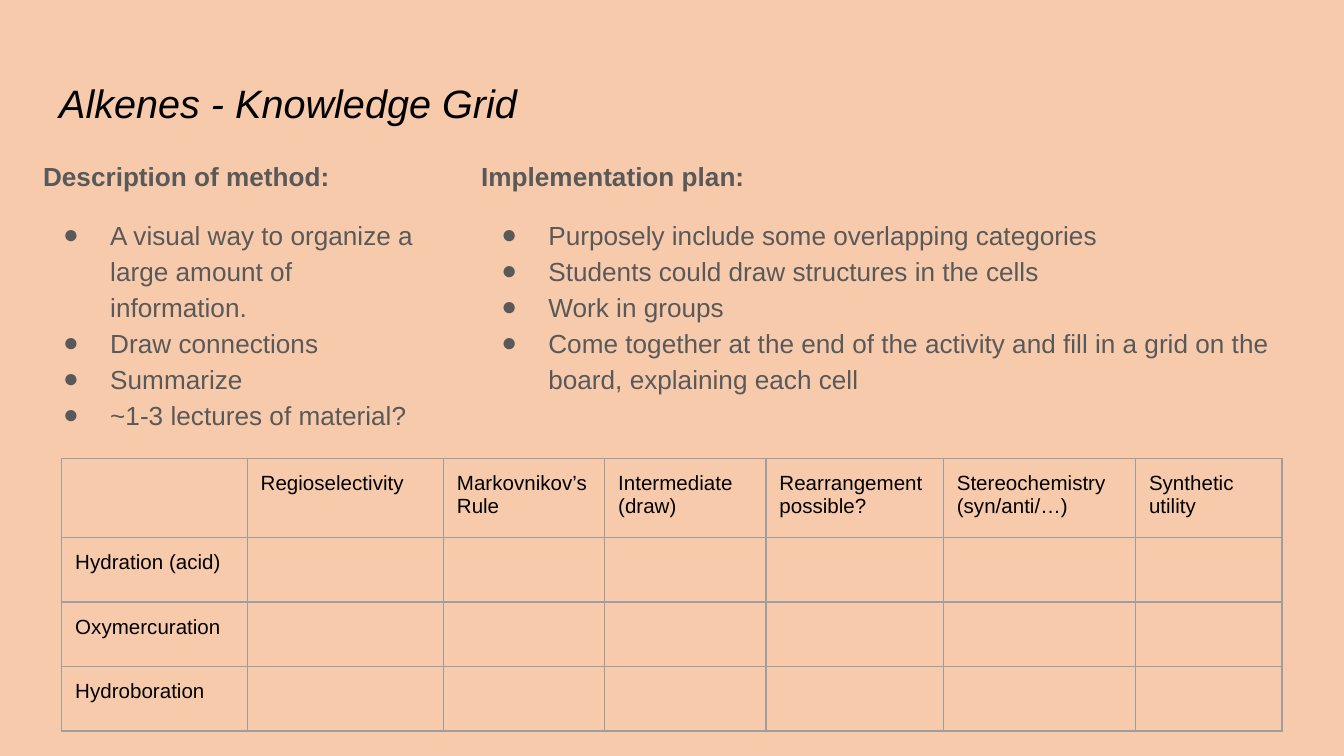
"""Build the Alkenes knowledge grid slide."""
from dataclasses import dataclass

from lxml import etree
from pptx import Presentation
from pptx.dml.color import RGBColor
from pptx.enum.text import MSO_ANCHOR, MSO_AUTO_SIZE, PP_ALIGN
from pptx.oxml.ns import qn
from pptx.util import Inches, Pt

LEFT = PP_ALIGN.LEFT
TOP = MSO_ANCHOR.TOP
NO_AUTOFIT = MSO_AUTO_SIZE.NONE


@dataclass(frozen=True)
class Theme:
    font: str = "Arial"
    background: str = "F7CAAC"
    ink: str = "000000"
    body: str = "595959"
    border: str = "9E9E9E"
    title_size: float = 21.2
    body_size: float = 14
    cell_size: float = 11
    border_width: float = 0.75


def style(paragraph, size, color, bold=False, italic=False):
    paragraph.alignment = LEFT
    font = paragraph.font
    font.name, font.size = theme.font, Pt(size)
    font.bold, font.italic = bold, italic
    font.color.rgb = RGBColor.from_string(color)


def place(shape, left, top, width, height):
    shape.left, shape.top = Inches(left), Inches(top)
    shape.width, shape.height = Inches(width), Inches(height)
    frame = shape.text_frame
    frame.margin_left = frame.margin_right = Inches(0.1)
    frame.margin_top = frame.margin_bottom = Inches(0.1)
    frame.vertical_anchor = TOP
    frame.word_wrap = True
    frame.auto_size = NO_AUTOFIT
    return frame


theme = Theme()
deck = Presentation()
deck.slide_width, deck.slide_height = Inches(10), Inches(10 * 9 / 16)
page = deck.slides.add_slide(deck.slide_layouts[3])
page.background.fill.solid()
page.background.fill.fore_color.rgb = RGBColor.from_string(theme.background)

title = place(page.shapes.title, 0.34, 0.49, 9.32, 0.63)
title.text = "Alkenes - Knowledge Grid"
style(title.paragraphs[0], theme.title_size, theme.ink, italic=True)

columns = [
    (1, (0.22, 1.06, 2.97, 4.24), [
        "Description of method:",
        "A visual way to organize a large amount of information.",
        "Draw connections",
        "Summarize",
        "~1-3 lectures of material?",
    ]),
    (2, (3.48, 1.06, 6.18, 2), [
        "Implementation plan:",
        "Purposely include some overlapping categories",
        "Students could draw structures in the cells",
        "Work in groups",
        "Come together at the end of the activity and fill in a grid on the board, explaining each cell",
    ]),
]
for index, bounds, lines in columns:
    frame = place(page.placeholders[index], *bounds)
    frame.text = "\n".join(lines)
    for number, paragraph in enumerate(frame.paragraphs):
        heading = number == 0
        paragraph.line_spacing = 1.15
        paragraph.space_before = Pt(12 if number == 1 else 0)
        properties = paragraph._p.get_or_add_pPr()
        properties.set("marL", str(Inches(0 if heading else 0.5)))
        properties.set("indent", str(Inches(0 if heading else -0.35)))
        if heading:
            etree.SubElement(properties, qn("a:buNone"))
        else:
            bullet_color = etree.SubElement(properties, qn("a:buClr"))
            etree.SubElement(bullet_color, qn("a:srgbClr"), val=theme.body)
            etree.SubElement(properties, qn("a:buChar"), char="●")
        style(paragraph, theme.body_size, theme.body, bold=heading)

headers = [
    "", "Regioselectivity", "Markovnikov’s\nRule", "Intermediate\n(draw)",
    "Rearrangement possible?", "Stereochemistry\n(syn/anti/…)", "Synthetic\nutility",
]
reactions = ["Hydration (acid)", "Oxymercuration", "Hydroboration"]
rows = [headers] + [[name] + [""] * (len(headers) - 1) for name in reactions]
widths = [1.38, 1.46, 1.2, 1.2, 1.32, 1.43, 1.09]
heights = [0.59] + [0.48] * len(reactions)

grid = page.shapes.add_table(
    len(rows), len(widths), Inches(0.46), Inches(3.41),
    Inches(sum(widths)), Inches(sum(heights)),
).table
grid.first_row = grid.horz_banding = False
for column, width in zip(grid.columns, widths):
    column.width = Inches(width)
for row, height, texts in zip(grid.rows, heights, rows):
    row.height = Inches(height)
    for cell, text in zip(row.cells, texts):
        cell.text = text
        cell.margin_left = cell.margin_right = Inches(0.1)
        cell.margin_top = cell.margin_bottom = Inches(0.1)
        for paragraph in cell.text_frame.paragraphs:
            style(paragraph, theme.cell_size, theme.ink)
        properties = cell._tc.get_or_add_tcPr()
        for side in ("a:lnL", "a:lnR", "a:lnT", "a:lnB"):
            line = etree.SubElement(properties, qn(side), w=str(Pt(theme.border_width)))
            fill = etree.SubElement(line, qn("a:solidFill"))
            etree.SubElement(fill, qn("a:srgbClr"), val=theme.border)
        cell.fill.background()

deck.save("out.pptx")
